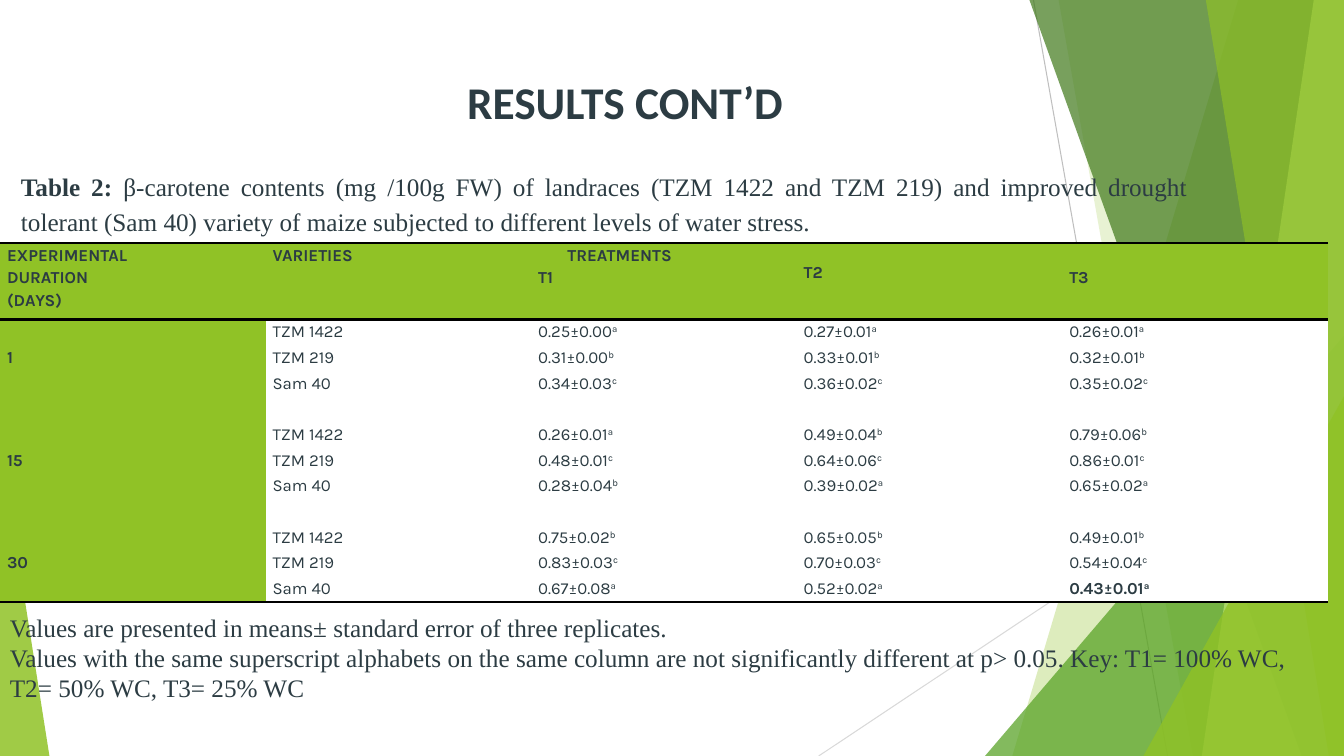
from lxml import etree
from pptx import Presentation
from pptx.dml.color import RGBColor
from pptx.enum.shapes import MSO_CONNECTOR, MSO_SHAPE
from pptx.enum.text import MSO_ANCHOR, PP_ALIGN
from pptx.oxml.ns import qn
from pptx.util import Inches, Pt

LINE = MSO_CONNECTOR.STRAIGHT
PEAK = MSO_SHAPE.ISOSCELES_TRIANGLE
MIDDLE = MSO_ANCHOR.MIDDLE
LEFT, CENTER, JUSTIFY = PP_ALIGN.LEFT, PP_ALIGN.CENTER, PP_ALIGN.JUSTIFY


class Theme:
    ink, black, white = "2C3C43", "000000", "FFFFFF"
    lime, leaf, moss, pale = "90C226", "54A021", "3F7819", "C0E474"
    gray, mist = "BFBFBF", "D9D9D9"
    head, body, grid = ("Calibri", 32.4), ("Times New Roman", 18), ("Karla", 12)


def style(para, face, bold, align, spacing=None):
    """Set the font and layout of a paragraph."""
    font = para.font
    font.name, font.size = face[0], Pt(face[1])
    font.bold = bold
    font.color.rgb = RGBColor.from_string(Theme.ink)
    para.alignment = align
    para.line_spacing = spacing


def add_box(left, top, width, height):
    box = slide.shapes.add_textbox(*map(Inches, (left, top, width, height)))
    box.text_frame.word_wrap = True
    return box.text_frame


deck = Presentation()
deck.slide_width, deck.slide_height = Inches(13.33), Inches(7.5)
slide = deck.slides.add_slide(deck.slide_layouts[6])

# Backdrop: thin lines, then slanted bands and triangles
for color, *ends in ((Theme.gray, 10.25, 0, 11.58, 7.5),
                     (Theme.mist, 13.33, 4.03, 8.12, 7.5)):
    line = slide.shapes.add_connector(LINE, *map(Inches, ends))
    line.line.color.rgb = RGBColor.from_string(color)
    line.line.width = Pt(0.75)
    etree.SubElement(line._element.spPr, qn("a:effectLst"))

# A band gives its left edge at top and bottom; a triangle its box and apex
backdrop = (
    ("band", (12.28, 10.04), Theme.lime, 30),
    ("band", (10.5, 11.83), Theme.lime, 20),
    ("peak", (9.77, 3.33, 3.56, 4.17, 1), Theme.leaf, 72),
    ("band", (10.21, 12.91), Theme.moss, 70),
    ("band", (13.03, 11.92), Theme.pale, 70),
    ("band", (11.96, 13.18), Theme.lime, 65),
    ("peak", (11.34, 3.93, 1.99, 3.57, 1), Theme.lime, 80),
    ("peak", (0, 4.39, 0.49, 3.11, 0), Theme.lime, 85),
)
for kind, place, color, alpha in backdrop:
    if kind == "band":
        top, base = map(Inches, place)
        right, foot = deck.slide_width, deck.slide_height
        path = slide.shapes.build_freeform(top, 0)
        path.add_line_segments([(right, 0), (right, foot), (base, foot)])
        shape = path.convert_to_shape()
    else:
        *area, apex = place
        shape = slide.shapes.add_shape(PEAK, *map(Inches, area))
        shape.adjustments[0] = apex
    shape.shadow.inherit = False
    shape.line.fill.background()
    shape.fill.solid()
    shape.fill.fore_color.rgb = RGBColor.from_string(color)
    tint = shape._element.spPr.find(qn("a:solidFill"))[0]
    etree.SubElement(tint, qn("a:alpha"), val=str(alpha * 1000))

title = add_box(0.47, 0.67, 11.46, 0.68)
title.vertical_anchor = MIDDLE
title.text = "RESULTS CONT’D"
style(title.paragraphs[0], Theme.head, True, CENTER)

# Table: one block of three varieties per duration
names = ("TZM 1422", "TZM 219", "Sam 40")
blocks = (
    ("1", ("0.25±0.00a 0.27±0.01a 0.26±0.01a",
           "0.31±0.00b 0.33±0.01b 0.32±0.01b",
           "0.34±0.03c 0.36±0.02c 0.35±0.02c")),
    ("15", ("0.26±0.01a 0.49±0.04b 0.79±0.06b",
            "0.48±0.01c 0.64±0.06c 0.86±0.01c",
            "0.28±0.04b 0.39±0.02a 0.65±0.02a")),
    ("30", ("0.75±0.02b 0.65±0.05b 0.49±0.01b",
            "0.83±0.03c 0.70±0.03c 0.54±0.04c",
            "0.67±0.08a 0.52±0.02a 0.43±0.01a")),
)
rows = [["EXPERIMENTAL\nDURATION\n(DAYS)", "VARIETIES", "TREATMENTS\nT1", "T2", "T3"]]
for days, lines in blocks:
    if len(rows) > 1:
        rows.append([""] * 5)
    for i, (name, line) in enumerate(zip(names, lines)):
        rows.append([days if i == 1 else "", name, *line.split()])
last = len(rows) - 1

frame = slide.shapes.add_table(len(rows), 5, 0, Inches(2.41), Inches(13.17), Inches(3.57))
table = frame.table
table.first_row = table.horz_banding = False
plain = "{2D5ABB26-0587-4C30-8999-92F81FD0307C}"
table._tbl.tblPr.find(qn("a:tableStyleId")).text = plain
for col in table.columns:
    col.width = Inches(13.17 / 5)

for r, row in enumerate(rows):
    table.rows[r].height = Inches(0.255 if r else 0.76)
    for c, text in enumerate(row):
        cell = table.cell(r, c)
        cell.margin_left = cell.margin_right = Inches(0.07)
        cell.margin_top = cell.margin_bottom = 0
        value = r > 0 and c > 1 and text
        cell.text = text[:-1] if value else text
        for para in cell.text_frame.paragraphs:
            bold = r == 0 or c == 0 or (r == last and c == 4)
            style(para, Theme.grid, bold, JUSTIFY, 1.15)
            if value:
                mark = para.add_run()
                mark.text = text[-1]
                mark._r.get_or_add_rPr().set("baseline", "30000")
            elif not text:
                etree.SubElement(para._p, qn("a:endParaRPr"), sz="1200")
        for side in ("lnT", "lnB"):
            if r == 0 or (r == last and side == "lnB"):
                edge = etree.SubElement(cell._tc.get_or_add_tcPr(), qn("a:" + side),
                                        w=str(Pt(2)))
                fill = etree.SubElement(edge, qn("a:solidFill"))
                etree.SubElement(fill, qn("a:srgbClr"), val=Theme.black)
        cell.fill.solid()
        green = r == 0 or c == 0
        cell.fill.fore_color.rgb = RGBColor.from_string(Theme.lime if green else Theme.white)

table.cell(0, 2).text_frame.paragraphs[0]._p.get_or_add_pPr().set("marL", str(Inches(0.29)))
table.cell(0, 3).margin_top = Inches(0.17)
table.cell(0, 4).margin_top = Inches(0.22)

caption = add_box(0.11, 1.61, 11.77, 0.8).paragraphs[0]
style(caption, Theme.body, None, JUSTIFY, 1.15)
label = caption.add_run()
label.text = "Table 2: "
label.font.bold = True
caption.add_run().text = (
    "β-carotene contents (mg /100g FW) of landraces (TZM 1422 and TZM 219) and improved "
    "drought tolerant (Sam 40) variety of maize subjected to different levels of water stress.")

notes = add_box(0, 5.98, 13.17, 1.06)
notes.text = (
    "Values are presented in means± standard error of three replicates.\n"
    "Values with the same superscript alphabets on the same column are not significantly "
    "different at p> 0.05. Key: T1= 100% WC, T2= 50% WC, T3= 25% WC")
style(notes.paragraphs[0], Theme.body, False, JUSTIFY, 1.15)
style(notes.paragraphs[1], Theme.body, False, LEFT)

deck.save("out.pptx")
